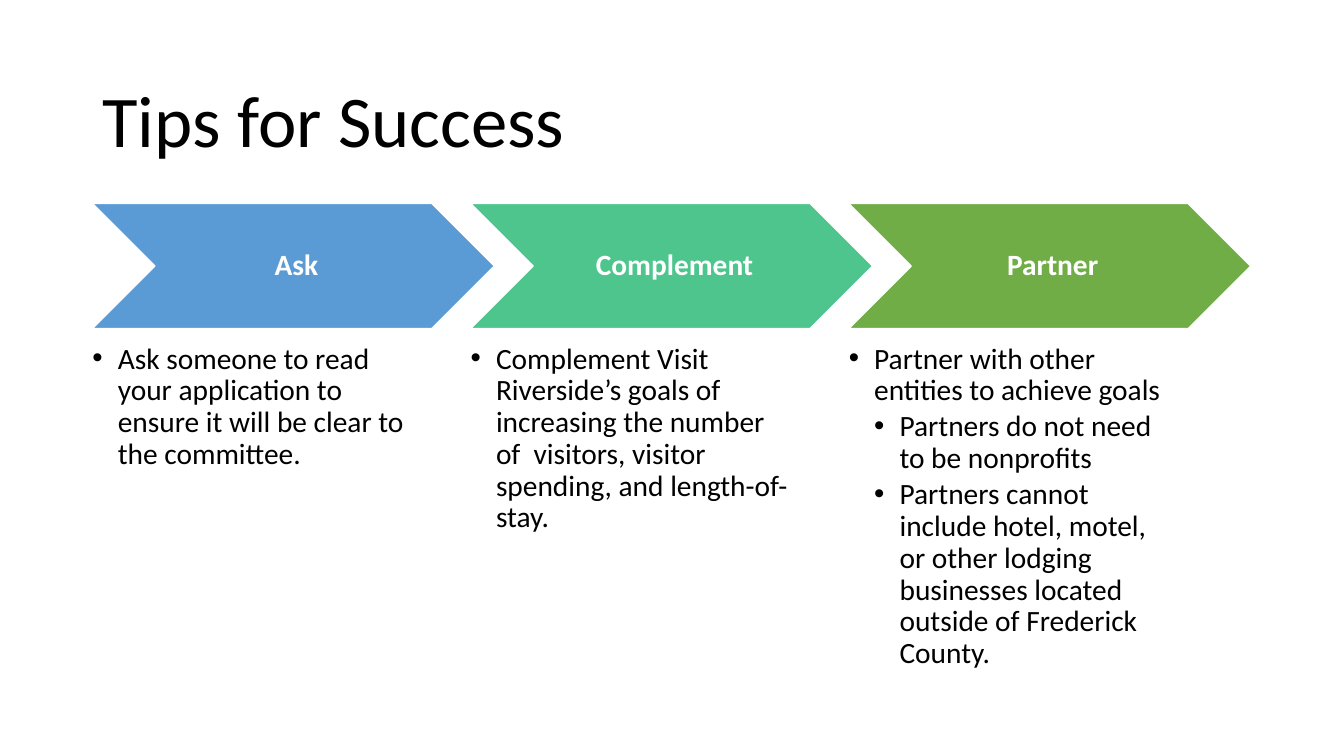
from lxml import etree
from pptx import Presentation
from pptx.dml.color import RGBColor
from pptx.enum.shapes import MSO_SHAPE
from pptx.enum.text import MSO_ANCHOR, MSO_AUTO_SIZE, PP_ALIGN
from pptx.oxml.ns import qn
from pptx.util import Cm, Pt

CHEVRON = MSO_SHAPE.CHEVRON
TOP, MIDDLE = MSO_ANCHOR.TOP, MSO_ANCHOR.MIDDLE
LEFT, CENTER = PP_ALIGN.LEFT, PP_ALIGN.CENTER
NO_AUTOFIT = MSO_AUTO_SIZE.NONE

COMPARISON_LAYOUT = 4
MARGIN, COLUMN_STEP = 2.33, 9.53
INDENT = 0.64

STEPS = [
    ("Ask", "5B9BD5", [
        (0, "Ask someone to read your application to ensure it will be clear to the committee."),
    ]),
    ("Complement", "4DC58D", [
        (0, "Complement Visit Riverside’s goals of increasing the number of  visitors, "
            "visitor spending, and length-of-stay."),
    ]),
    ("Partner", "70AD47", [
        (0, "Partner with other entities to achieve goals"),
        (1, "Partners do not need to be nonprofits"),
        (1, "Partners cannot include hotel, motel, or other lodging businesses located "
            "outside of Frederick County."),
    ]),
]


def color(value):
    return RGBColor.from_string(value)


def write(para, text, size=21, fill="000000", bold=False, align=LEFT, after=0, bullet_level=None):
    """Fill a paragraph; a bullet_level makes it a bulleted item of that depth."""
    if bullet_level is not None:
        para.level = bullet_level
        properties = para._p.get_or_add_pPr()
        properties.set("marL", str(Cm(INDENT * (bullet_level + 1))))
        properties.set("indent", str(-Cm(INDENT)))
        etree.SubElement(properties, qn("a:buFont")).set("typeface", "Arial")
        etree.SubElement(properties, qn("a:buChar")).set("char", "•")
    para.alignment = align
    para.line_spacing = 0.9
    para.space_before = Pt(0)
    para.space_after = Pt(after)
    span = para.add_run()
    span.text = text
    span.font.name = "Calibri"
    span.font.size = Pt(size)
    span.font.bold = bold
    span.font.color.rgb = color(fill)


deck = Presentation()
deck.slide_width, deck.slide_height = Cm(33.87), Cm(19.05)
page = deck.slides.add_slide(deck.slide_layouts[COMPARISON_LAYOUT])

title, *lists, spare = page.placeholders
spare.element.getparent().remove(spare.element)

title.left, title.top, title.width, title.height = Cm(MARGIN), Cm(1.55), Cm(29.21), Cm(3.15)
title.text_frame.vertical_anchor = MIDDLE
title.text_frame.auto_size = NO_AUTOFIT
write(title.text_frame.paragraphs[0], "Tips for Success", size=52)

for column, (box, (heading, fill, items)) in enumerate(zip(lists, STEPS)):
    left = Cm(MARGIN + column * COLUMN_STEP)

    arrow = page.shapes.add_shape(CHEVRON, left, Cm(5.13), Cm(10.13), Cm(3.15))
    arrow.shadow.inherit = False
    arrow.fill.solid()
    arrow.fill.fore_color.rgb = color(fill)
    arrow.line.color.rgb = color("FFFFFF")
    arrow.line.width = Pt(1)
    frame = arrow.text_frame
    frame.vertical_anchor = MIDDLE
    frame.margin_left = Cm(0.23)
    frame.margin_right = frame.margin_top = frame.margin_bottom = Cm(0.08)
    write(frame.paragraphs[0], heading, fill="FFFFFF", bold=True, align=CENTER)

    box.left, box.top, box.width, box.height = left, Cm(8.66), Cm(8.1), Cm(8.43)
    frame = box.text_frame
    frame.word_wrap = True
    frame.auto_size = NO_AUTOFIT
    frame.vertical_anchor = TOP
    frame.margin_left = frame.margin_right = frame.margin_top = frame.margin_bottom = 0
    for number, (level, text) in enumerate(items):
        para = frame.add_paragraph() if number else frame.paragraphs[0]
        write(para, text, after=3.15, bullet_level=level)

deck.save("out.pptx")
